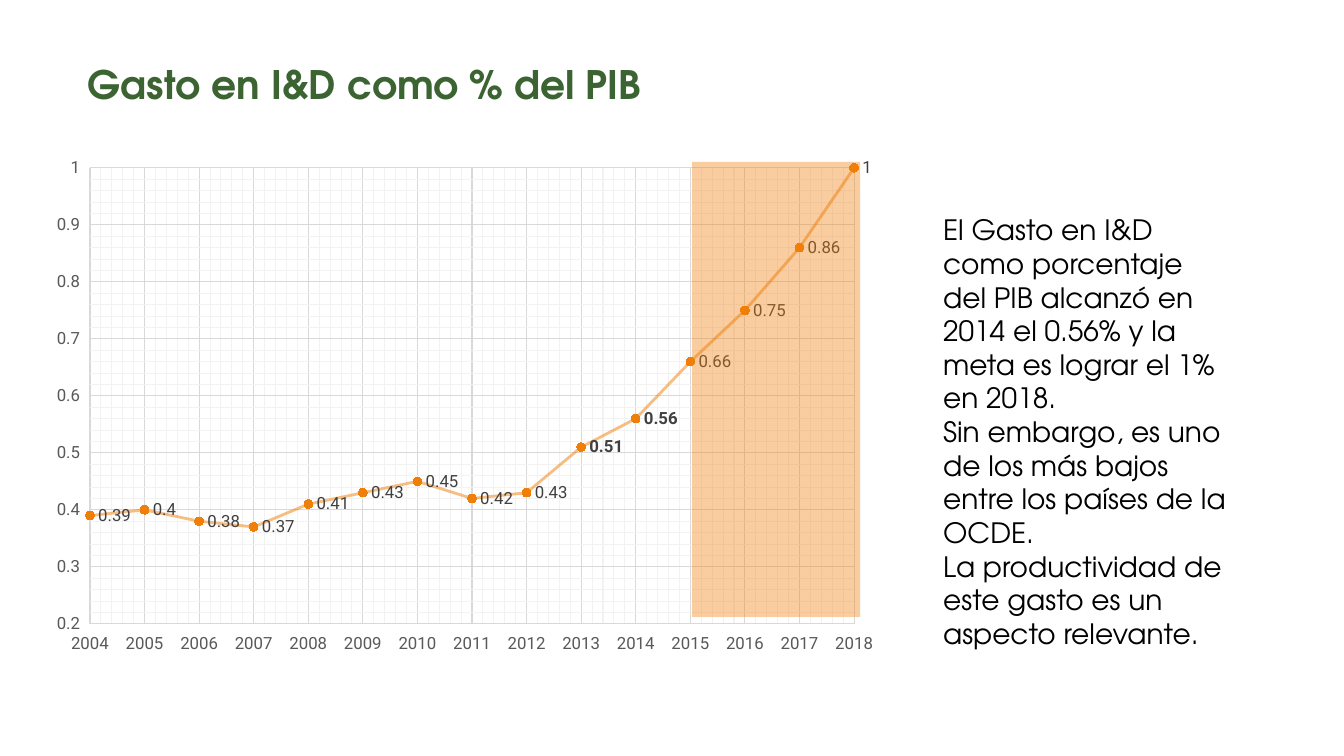
import pptx
import pptx.chart.data
import pptx.dml.color
import pptx.enum.chart
import pptx.enum.shapes
import pptx.enum.text
import pptx.oxml
import pptx.oxml.ns
import pptx.util

PX = 914400 / 100.8
ORANGE, GREEN, BLACK, LABEL_GRAY, AXIS_GRAY = "F07F09", "3B6432", "000000", "404040", "595959"
MAJOR_GRID, MINOR_GRID = "D9D9D9", "F2F2F2"
TEXT_FONT, CHART_FONT = "TeX Gyre Adventor", "Roboto"

TITLE = ["Gasto en I&D como % del PIB"]
COMMENTARY = [
    "El Gasto en I&D como porcentaje del PIB alcanzó en 2014 el 0.56% y la meta es lograr el 1% en 2018.",
    "Sin embargo, es uno de los más bajos entre los países de la OCDE.",
    "La productividad de este gasto es un aspecto relevante.",
]
FIRST_YEAR = 2004
SPENDING = [0.39, 0.4, 0.38, 0.37, 0.41, 0.43, 0.45, 0.42, 0.43, 0.51, 0.56, 0.66, 0.75, 0.86, 1]
BOLD_YEARS = (2013, 2014)

TITLE_BOX = (78, 33, 835, 101)
CHART_BOX = (46, 148, 844, 511)
PLOT_BOX = (90, 168, 764, 456)
TARGET_BOX = (692, 162, 168, 455)
COMMENTARY_BOX = (933, 208, 307, 452)


def emu(box):
    return [round(length * PX) for length in box]


def color(value):
    return pptx.dml.color.RGBColor.from_string(value)


def style(font, name, size, value, bold=False):
    font.name, font.size, font.bold = name, pptx.util.Pt(size), bold
    font.color.rgb = color(value)


def set_opacity(element, percent):
    for fill_color in element.iter(pptx.oxml.ns.qn("a:srgbClr")):
        alpha = fill_color.makeelement(pptx.oxml.ns.qn("a:alpha"), {"val": str(percent * 1000)})
        fill_color.append(alpha)


def add_text(slide, box, lines, size, value, bold, anchor):
    frame = slide.shapes.add_textbox(*emu(box)).text_frame
    frame.word_wrap = True
    frame.vertical_anchor = anchor
    frame.text = "\n".join(lines)
    for paragraph in frame.paragraphs:
        for run in paragraph.runs:
            style(run.font, TEXT_FONT, size, value, bold)


def style_axis(axis, low, high, major, minor):
    axis.minimum_scale, axis.maximum_scale = low, high
    axis.major_unit = major
    axis.major_tick_mark = axis.minor_tick_mark = pptx.enum.chart.XL_TICK_MARK.NONE
    axis.tick_label_position = pptx.enum.chart.XL_TICK_LABEL_POSITION.LOW
    axis.tick_labels.number_format = "General"
    axis.tick_labels.number_format_is_linked = False
    style(axis.tick_labels.font, CHART_FONT, 12, AXIS_GRAY)
    axis.format.line.fill.background()
    axis.has_major_gridlines = True
    grid_line = axis.major_gridlines.format.line
    grid_line.color.rgb = color(MAJOR_GRID)
    grid_line.width = pptx.util.Pt(0.75)
    minor_grid = pptx.oxml.parse_xml(
        f'<c:minorGridlines {pptx.oxml.ns.nsdecls("c", "a")}><c:spPr><a:ln w="9525"><a:solidFill>'
        f'<a:srgbClr val="{MINOR_GRID}"/></a:solidFill></a:ln></c:spPr></c:minorGridlines>')
    axis.major_gridlines._xAx.find(pptx.oxml.ns.qn("c:majorGridlines")).addnext(minor_grid)
    axis.minor_unit = minor


def set_plot_area(chart):
    chart_left, chart_top, chart_width, chart_height = CHART_BOX
    left, top, width, height = PLOT_BOX
    fractions = {
        "x": (left - chart_left) / chart_width,
        "y": (top - chart_top) / chart_height,
        "w": width / chart_width,
        "h": height / chart_height,
    }
    parts = "".join(f'<c:{key}Mode val="edge"/>' for key in "xy")
    parts += "".join(f'<c:{key} val="{value:.4f}"/>' for key, value in fractions.items())
    layout = pptx.oxml.parse_xml(
        f'<c:layout {pptx.oxml.ns.nsdecls("c")}><c:manualLayout><c:layoutTarget val="inner"/>'
        f'{parts}</c:manualLayout></c:layout>')
    plot_area = chart._chartSpace.chart.plotArea
    for old_layout in plot_area.findall(pptx.oxml.ns.qn("c:layout")):
        plot_area.remove(old_layout)
    plot_area.insert(0, layout)


def add_spending_chart(slide):
    data = pptx.chart.data.XyChartData()
    points = data.add_series("Series 1")
    for year, value in enumerate(SPENDING, FIRST_YEAR):
        points.add_data_point(year, value)
    chart = slide.shapes.add_chart(
        pptx.enum.chart.XL_CHART_TYPE.XY_SCATTER_LINES, *emu(CHART_BOX), data).chart
    chart.has_title = chart.has_legend = False
    style(chart.font, CHART_FONT, 10, BLACK)
    plot = chart.plots[0]
    plot.vary_by_categories = False
    style_axis(chart.category_axis, FIRST_YEAR, FIRST_YEAR + len(SPENDING) - 1, 1, 0.2)
    style_axis(chart.value_axis, 0.2, 1, 0.1, 0.02)
    set_plot_area(chart)

    series = plot.series[0]
    series.smooth = False
    series.format.line.color.rgb = color(ORANGE)
    series.format.line.width = pptx.util.Pt(2)
    set_opacity(series._element.find(pptx.oxml.ns.qn("c:spPr")), 50)
    series.marker.style = pptx.enum.chart.XL_MARKER_STYLE.CIRCLE
    series.marker.size = 6
    series.marker.format.fill.solid()
    series.marker.format.fill.fore_color.rgb = color(ORANGE)
    series.marker.format.line.color.rgb = color(ORANGE)
    for index in range(len(SPENDING)):
        label = series.points[index].data_label
        style(label.font, CHART_FONT, 12, LABEL_GRAY, FIRST_YEAR + index in BOLD_YEARS)
        label.position = pptx.enum.chart.XL_LABEL_POSITION.RIGHT


def add_target_band(slide):
    shape = slide.shapes.add_shape(pptx.enum.shapes.MSO_SHAPE.RECTANGLE, *emu(TARGET_BOX))
    shape.shadow.inherit = False
    shape.fill.solid()
    shape.fill.fore_color.rgb = color(ORANGE)
    set_opacity(shape._element.spPr, 39)
    shape.line.fill.background()


def main():
    presentation = pptx.Presentation()
    presentation.slide_width = pptx.util.Inches(13.33)
    presentation.slide_height = pptx.util.Inches(7.5)
    slide = presentation.slides.add_slide(presentation.slide_layouts[6])
    add_text(slide, TITLE_BOX, TITLE, 28, GREEN, True, pptx.enum.text.MSO_ANCHOR.MIDDLE)
    add_spending_chart(slide)
    add_target_band(slide)
    add_text(slide, COMMENTARY_BOX, COMMENTARY, 20, BLACK, False, pptx.enum.text.MSO_ANCHOR.TOP)
    presentation.save("out.pptx")


if __name__ == "__main__":
    main()
